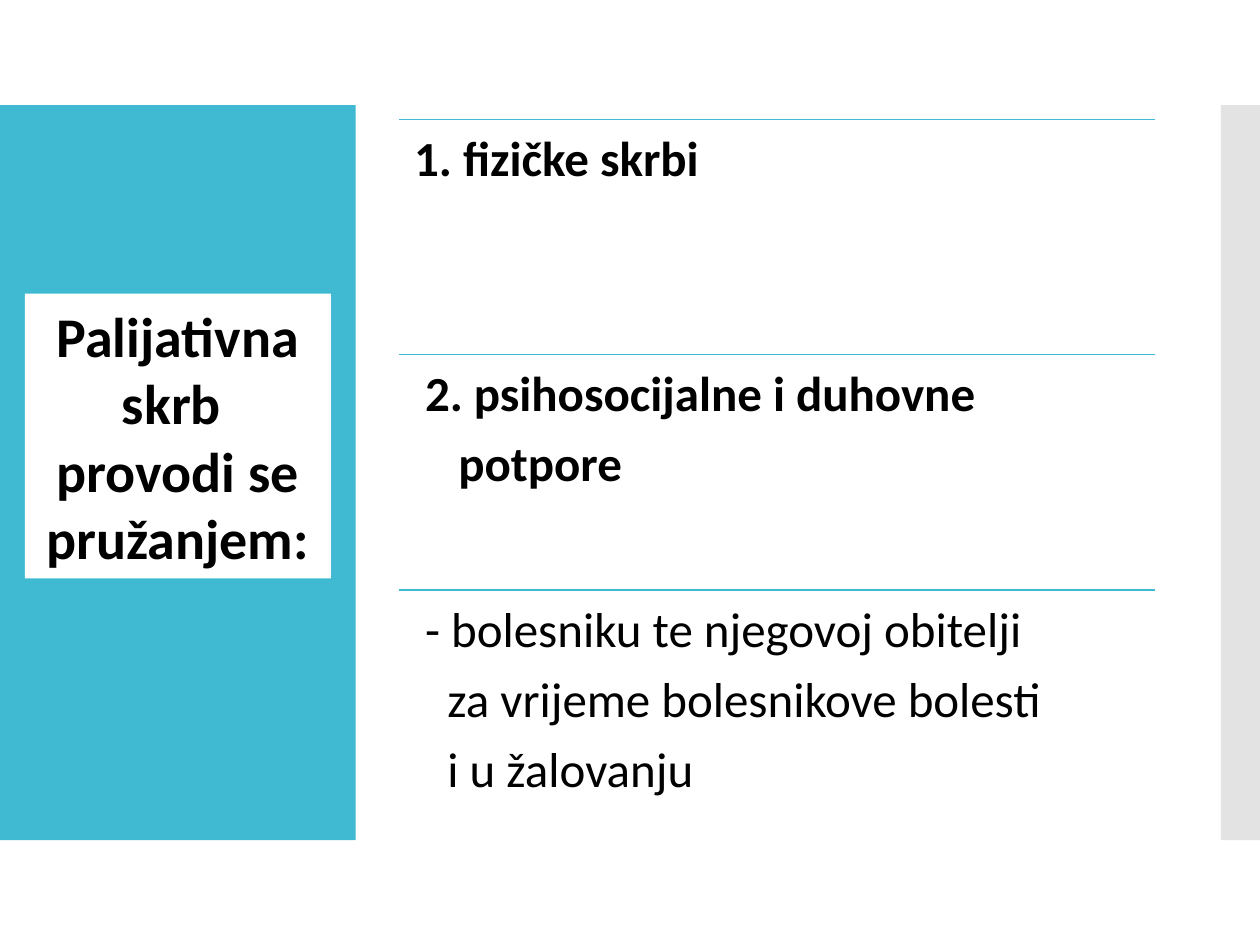
from dataclasses import dataclass

from lxml import etree
from pptx import Presentation
from pptx.dml.color import RGBColor
from pptx.enum.shapes import MSO_CONNECTOR, MSO_SHAPE
from pptx.enum.text import MSO_ANCHOR, MSO_AUTO_SIZE, PP_ALIGN
from pptx.oxml.ns import qn
from pptx.util import Cm, Pt

RECT = MSO_SHAPE.RECTANGLE
STRAIGHT = MSO_CONNECTOR.STRAIGHT
TOP, MIDDLE = MSO_ANCHOR.TOP, MSO_ANCHOR.MIDDLE
NO_AUTOFIT = MSO_AUTO_SIZE.NONE
CENTER = PP_ALIGN.CENTER


@dataclass(frozen=True)
class Theme:
    accent: RGBColor = RGBColor(0x40, 0xBA, 0xD2)
    grey: RGBColor = RGBColor(0xC8, 0xC8, 0xC8)
    white: RGBColor = RGBColor(0xFF, 0xFF, 0xFF)
    black: RGBColor = RGBColor(0, 0, 0)
    font: str = "Calibri"
    title_size: Pt = Pt(32)
    body_size: Pt = Pt(28)
    body_gap: Pt = Pt(9.8)
    rule_width: Pt = Pt(0.85)


THEME = Theme()

SLIDE_W, SLIDE_H = Cm(25.4), Cm(19.05)
PANEL_TOP, PANEL_H = Cm(2.12), Cm(14.82)
LIST_LEFT, LIST_TOP, LIST_W = Cm(8.05), Cm(2.41), Cm(15.24)
ROW_H = Cm(4.74)
INSET = Cm(0.3)

TITLE = ["Palijativna skrb ", "provodi se pružanjem:"]

# Each row: bold flag, then its lines as (left indent, text)
ROWS = [
    (True, [(Cm(0), "1. fizičke skrbi")]),
    (True, [(Cm(0.22), "2. psihosocijalne i duhovne"), (Cm(0.89), "potpore")]),
    (False, [
        (Cm(0.22), "- bolesniku te njegovoj obitelji"),
        (Cm(0.67), "za vrijeme bolesnikove bolesti"),
        (Cm(0.67), "i u žalovanju"),
    ]),
]


def format_runs(p, size, bold):
    for r in p.runs:
        r.font.name = THEME.font
        r.font.size = size
        r.font.bold = bold
        r.font.color.rgb = THEME.black


def add_panel(slide, left, width, color, alpha=None):
    """Add a full-height side band; alpha is an opacity in percent."""
    sp = slide.shapes.add_shape(RECT, left, PANEL_TOP, width, PANEL_H)
    sp.shadow.inherit = False
    sp.fill.solid()
    sp.fill.fore_color.rgb = color
    sp.line.fill.background()
    if alpha is not None:
        clr = sp.fill._xPr.find(".//" + qn("a:srgbClr"))
        etree.SubElement(clr, qn("a:alpha"), val=str(alpha * 1000))


def add_rule(slide, top):
    line = slide.shapes.add_connector(
        STRAIGHT, LIST_LEFT, top, LIST_LEFT + LIST_W, top)
    line.line.color.rgb = THEME.accent
    line.line.width = THEME.rule_width
    etree.SubElement(line._element.spPr, qn("a:effectLst"))


def add_row_text(slide, top, lines, bold):
    tf = slide.shapes.add_textbox(LIST_LEFT, top, LIST_W, ROW_H).text_frame
    tf.word_wrap = True
    tf.vertical_anchor = TOP
    tf.margin_left = tf.margin_right = INSET
    tf.margin_top = tf.margin_bottom = INSET
    tf.text = "\n".join(text for _, text in lines)
    for p, (indent, _) in zip(tf.paragraphs, lines):
        p.line_spacing = 0.9
        p.space_after = THEME.body_gap
        p._p.get_or_add_pPr().set("marL", str(indent))
        format_runs(p, THEME.body_size, bold)


def set_title(slide):
    """Fill the title placeholder and bring it in front of the side band."""
    sp = slide.shapes.title
    sp.left, sp.top, sp.width, sp.height = Cm(0.5), Cm(5.92), Cm(6.17), Cm(5.74)
    sp.fill.solid()
    sp.fill.fore_color.rgb = THEME.white
    tf = sp.text_frame
    tf.text = "\n".join(TITLE)
    tf.word_wrap = True
    tf.auto_size = NO_AUTOFIT
    tf.vertical_anchor = MIDDLE
    for p in tf.paragraphs:
        p.alignment = CENTER
        format_runs(p, THEME.title_size, True)
    slide.shapes._spTree.append(sp._element)


def main():
    prs = Presentation()
    prs.slide_width, prs.slide_height = SLIDE_W, SLIDE_H
    slide = prs.slides.add_slide(prs.slide_layouts[5])

    grey_left = Cm(24.61)
    add_panel(slide, Cm(0), Cm(7.17), THEME.accent)
    add_panel(slide, grey_left, SLIDE_W - grey_left, THEME.grey, alpha=50)
    for i, (bold, lines) in enumerate(ROWS):
        top = LIST_TOP + i * ROW_H
        add_rule(slide, top)
        add_row_text(slide, top, lines, bold)
    set_title(slide)

    prs.save("out.pptx")


if __name__ == "__main__":
    main()
